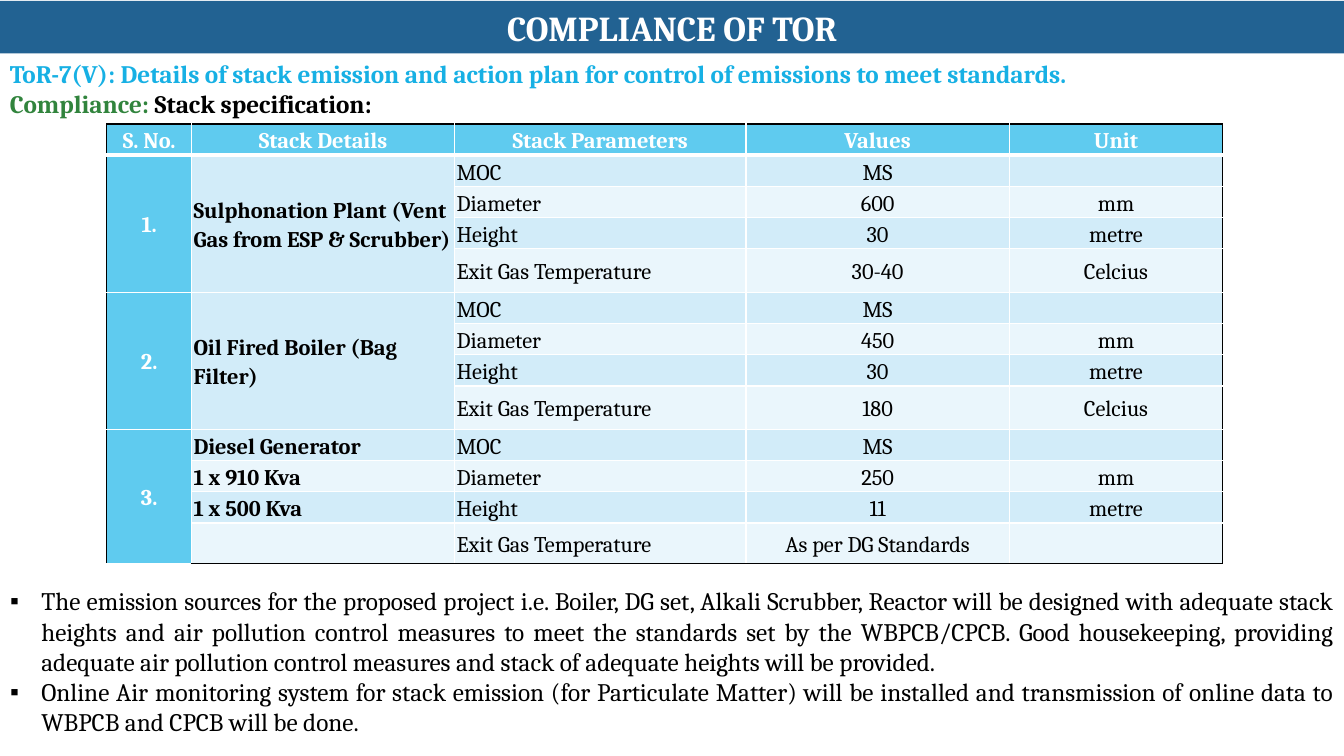
from pptx import Presentation
from pptx.dml.color import RGBColor
from pptx.enum.text import MSO_ANCHOR, PP_ALIGN
from pptx.oxml.ns import qn
from pptx.util import Inches, Pt
from lxml.etree import SubElement

WHITE = RGBColor(0xFF, 0xFF, 0xFF)
BLACK = RGBColor(0, 0, 0)
NAVY = RGBColor(0x22, 0x62, 0x92)
BLUE = RGBColor(0x17, 0xB0, 0xE4)
GREEN = RGBColor(0x31, 0x84, 0x3D)
SKY = RGBColor(0x5F, 0xCB, 0xEF)
PALE = RGBColor(0xD2, 0xEC, 0xF9)
MIST = RGBColor(0xEA, 0xF6, 0xFC)
FACE = "Cambria"


def add_run(para, text, size, color, bold=False):
    run = para.add_run()
    run.text = text
    run.font.name = FACE
    run.font.size = Pt(size)
    run.font.bold = bold
    run.font.color.rgb = color


def add_edge(cell, side, color, width):
    line = SubElement(cell._tc.get_or_add_tcPr(), qn("a:ln" + side), w=str(Pt(width)))
    fill = SubElement(line, qn("a:solidFill"))
    SubElement(fill, qn("a:srgbClr"), val=str(color))


deck = Presentation()
deck.slide_width = Inches(13.33)
deck.slide_height = Inches(7.5)
wide = deck.slide_width
slide = deck.slides.add_slide(deck.slide_layouts[1])
title, body = slide.placeholders

# Title band
title.left, title.top = 0, Inches(0.01)
title.width, title.height = wide, Inches(0.52)
title.fill.solid()
title.fill.fore_color.rgb = NAVY
title.text_frame.vertical_anchor = MSO_ANCHOR.MIDDLE
para = title.text_frame.paragraphs[0]
para.alignment = PP_ALIGN.CENTER
add_run(para, "COMPLIANCE OF TOR", 25, WHITE, True)

# Heading lines
head = slide.shapes.add_textbox(0, Inches(0.53), wide, Inches(0.7)).text_frame
head.word_wrap = True
add_run(head.paragraphs[0], "ToR-7(V): Details of stack emission and action plan "
        "for control of emissions to meet standards.", 18, BLUE, True)
para = head.add_paragraph()
add_run(para, "Compliance: ", 18, GREEN, True)
add_run(para, "Stack specification:", 18, BLACK, True)

# Table contents: name lines, then values and units of each stack
names = ["MOC", "Diameter", "Height", "Exit Gas Temperature"]
units = ["", "mm", "metre", "Celcius"]
stacks = [
    (["Sulphonation Plant (Vent Gas from ESP & Scrubber)"],
     ["MS", "600", "30", "30-40"], units),
    (["Oil Fired Boiler (Bag Filter)"], ["MS", "450", "30", "180"], units),
    (["Diesel Generator", "1 x 910 Kva", "1 x 500 Kva"],
     ["MS", "250", "11", "As per DG Standards"], units[:3] + [""]),
]
rows = [["S. No.", "Stack Details", "Stack Parameters", "Values", "Unit"]]
for num, (lines, values, marks) in enumerate(stacks, 1):
    lines = lines + [""] * (4 - len(lines))
    for i in range(4):
        rows.append([f"{num}." if i == 0 else "", lines[i], names[i], values[i], marks[i]])

# Table grid
cols = [0.84, 2.61, 2.89, 2.61, 2.12]
highs = [0.31] + [0.31, 0.31, 0.31, 0.43] * 2 + [0.31, 0.31, 0.31, 0.4]
last, end = len(rows) - 1, len(cols) - 1
grid = slide.shapes.add_table(len(rows), len(cols), Inches(1.06), Inches(1.23),
                              Inches(sum(cols)), Inches(sum(highs))).table
for col, size in zip(grid.columns, cols):
    col.width = Inches(size)
for row, size in zip(grid.rows, highs):
    row.height = Inches(size)

# Table cells
for r, row in enumerate(rows):
    for c, text in enumerate(row):
        cell = grid.cell(r, c)
        cell.margin_left = cell.margin_right = Inches(0.02)
        cell.margin_top = cell.margin_bottom = 0
        cell.vertical_anchor = MSO_ANCHOR.MIDDLE
        add_edge(cell, "L", BLACK if c == 0 else WHITE, 1)
        add_edge(cell, "R", BLACK if c == end else WHITE, 1)
        add_edge(cell, "T", BLACK if r == 0 else WHITE, 3 if r == 1 else 1)
        add_edge(cell, "B", BLACK if r == last else WHITE, 3 if r == 0 else 1)
        lead = r == 0 or c == 0
        cell.fill.solid()
        cell.fill.fore_color.rgb = SKY if lead else PALE if r % 2 else MIST
        para = cell.text_frame.paragraphs[0]
        para.line_spacing = 1.15
        para.alignment = PP_ALIGN.LEFT if r and c in (1, 2) else PP_ALIGN.CENTER
        if text:
            add_run(para, text, 16, WHITE if lead else BLACK, lead or c == 1)
        else:
            SubElement(para._p, qn("a:endParaRPr"), sz="1600")

# Merged cells
for n, (lines, _, _) in enumerate(stacks):
    top = 1 + 4 * n
    for c in range(2 if len(lines) == 1 else 1):
        grid.cell(top, c).merge(grid.cell(top + 3, c))

# Bullet list
notes = [
    "The emission sources for the proposed project i.e. Boiler, DG set, Alkali Scrubber, "
    "Reactor will be designed with adequate stack heights and air pollution control measures "
    "to meet the standards set by the WBPCB/CPCB. Good housekeeping, providing adequate air "
    "pollution control measures and stack of adequate heights will be provided.",
    "Online Air monitoring system for stack emission (for Particulate Matter) will be "
    "installed and transmission of online data to WBPCB and CPCB will be done.",
]
body.left, body.top = 0, Inches(5.76)
body.width, body.height = wide, Inches(1.62)
frame = body.text_frame
for i, note in enumerate(notes):
    para = frame.add_paragraph() if i else frame.paragraphs[0]
    para.alignment = PP_ALIGN.JUSTIFY
    para.space_before = Pt(0)
    props = para._p.get_or_add_pPr()
    props.set("marL", str(Inches(0.31)))
    props.set("indent", str(-Inches(0.31)))
    SubElement(props, qn("a:buFont"), typeface="Arial")
    SubElement(props, qn("a:buChar"), char="▪")
    add_run(para, note, 18, BLACK)

deck.save("out.pptx")
